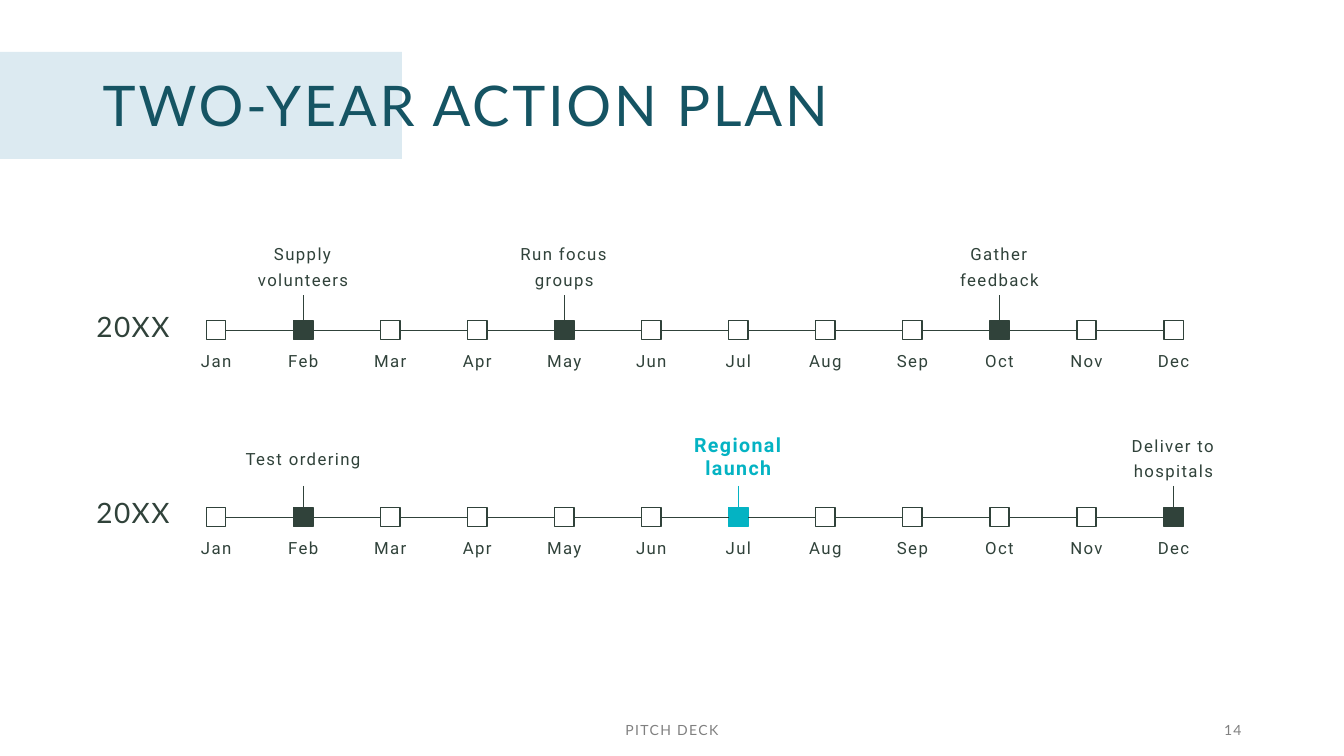
from pptx import Presentation
from pptx.dml.color import RGBColor
from pptx.enum.shapes import MSO_CONNECTOR as Link, MSO_SHAPE as Shape
from pptx.enum.text import MSO_ANCHOR as Anchor, MSO_AUTO_SIZE as AutoSize, PP_ALIGN as Align
from pptx.oxml.ns import qn
from pptx.util import Pt

TITLE_TEAL = RGBColor(0x15, 0x54, 0x63)
PALE_BLUE = RGBColor(0xDC, 0xEA, 0xF1)
DARK_GREEN = RGBColor(0x30, 0x42, 0x3A)
CYAN = RGBColor(0x04, 0xB3, 0xC3)
GRAY = RGBColor(0x80, 0x80, 0x80)

HEADING_FONT = "Lato"
BODY_FONT = "Roboto"
TOP, LEFT, BOTTOM, RIGHT = range(4)

MONTHS = ["Jan", "Feb", "Mar", "Apr", "May", "Jun",
          "Jul", "Aug", "Sep", "Oct", "Nov", "Dec"]
FIRST_MONTH, MONTH_STEP, MARKER = 154.4, 62.17, 13.8
CALLOUT_WIDTH, CALLOUT_HEIGHT, MONTH_WIDTH = 113, 43.6, 48

YEARS = [
    {"axis": 235.8, "callout_top": 167, "stem_top": 211,
     "events": {"Feb": "Supply volunteers", "May": "Run focus groups",
                "Oct": "Gather feedback"}},
    {"axis": 369.2, "callout_top": 304, "stem_top": 347,
     "events": {"Feb": "Test ordering", "Jul": "Regional launch",
                "Dec": "Deliver to hospitals"}},
]
HIGHLIGHT = "Regional launch"


class PlanSlide:
    def __init__(self, deck):
        self.page = deck.slides.add_slide(deck.slide_layouts[5])
        self.shapes = self.page.shapes

    def set_text(self, box, words, size, color, font=BODY_FONT, bold=False,
                 align=Align.CENTER, anchor=Anchor.MIDDLE, leading=1.0, tracking=1):
        frame = box.text_frame
        frame.word_wrap = True
        frame.auto_size = AutoSize.NONE
        frame.vertical_anchor = anchor
        para = frame.paragraphs[0]
        para.text = words
        para.alignment = align
        para.line_spacing = leading
        para.font.name = font
        para.font.size = Pt(size)
        para.font.bold = bold
        para.font.color.rgb = color
        para.font._rPr.set("spc", str(tracking * 100))

    def title(self, words, left, top, width, height):
        box = self.shapes.title
        box.left, box.top, box.width, box.height = map(Pt, (left, top, width, height))
        self.set_text(box, words, 40, TITLE_TEAL, HEADING_FONT,
                      align=Align.LEFT, leading=0.8, tracking=2)

    def text(self, words, left, top, width, height, size, color, **style):
        box = self.shapes.add_textbox(Pt(left), Pt(top), Pt(width), Pt(height))
        self.set_text(box, words, size, color, **style)

    def rectangle(self, left, top, width, height, fill=None, line=None):
        shape = self.shapes.add_shape(
            Shape.RECTANGLE, Pt(left), Pt(top), Pt(width), Pt(height))
        shape.shadow.inherit = False
        if fill is None:
            shape.fill.background()
        else:
            shape.fill.solid()
            shape.fill.fore_color.rgb = fill
        if line is None:
            shape.line.fill.background()
        else:
            shape.line.color.rgb = line
            shape.line.width = Pt(1)
        return shape

    def banner(self, left, top, width, height):
        shape = self.rectangle(left, top, width, height, PALE_BLUE)
        self.shapes._spTree.insert(2, shape._element)

    def line(self, x, y, color):
        link = self.shapes.add_connector(Link.STRAIGHT, Pt(x), Pt(y), Pt(x), Pt(y))
        link.line.color.rgb = color
        link.line.width = Pt(0.5)
        properties = link._element.spPr
        properties.append(properties.makeelement(qn("a:effectLst"), {}))
        return link

    def timeline(self, axis, callout_top, stem_top, events):
        self.text("20XX", 54.7, axis - 21.3, 80.6, 39.6, 20, DARK_GREEN,
                  font=HEADING_FONT, leading=0.9)
        previous = None
        for index, month in enumerate(MONTHS):
            center = FIRST_MONTH + index * MONTH_STEP
            event = events.get(month)
            special = event == HIGHLIGHT
            color = CYAN if special else DARK_GREEN
            marker = self.rectangle(center - MARKER / 2, axis - MARKER / 2,
                                    MARKER, MARKER, color if event else None, color)
            self.text(month, center - MONTH_WIDTH / 2, axis + 14.2,
                      MONTH_WIDTH, 51, 12, DARK_GREEN,
                      anchor=Anchor.TOP, leading=0.8)
            if previous is not None:
                link = self.line(center, axis, DARK_GREEN)
                link.begin_connect(previous, RIGHT)
                link.end_connect(marker, LEFT)
            if event:
                self.line(center, stem_top, color).end_connect(marker, TOP)
                self.text(event, center - CALLOUT_WIDTH / 2, callout_top,
                          CALLOUT_WIDTH, CALLOUT_HEIGHT, 14 if special else 12,
                          color, bold=special, leading=1.0 if special else 1.25)
            previous = marker


def main():
    deck = Presentation()
    deck.slide_width, deck.slide_height = Pt(960), Pt(540)
    slide = PlanSlide(deck)
    slide.banner(0, 37, 287, 76.5)
    slide.title("TWO-YEAR ACTION PLAN", 66.2, 52.6, 828, 51.8)
    for year in YEARS:
        slide.timeline(**year)
    slide.text("PITCH DECK", 318, 513.4, 324, 16, 10, GRAY, font=HEADING_FONT)
    slide.text("14", 678, 513.4, 216, 16, 10, GRAY, font=HEADING_FONT,
               align=Align.RIGHT)
    deck.save("out.pptx")


if __name__ == "__main__":
    main()
